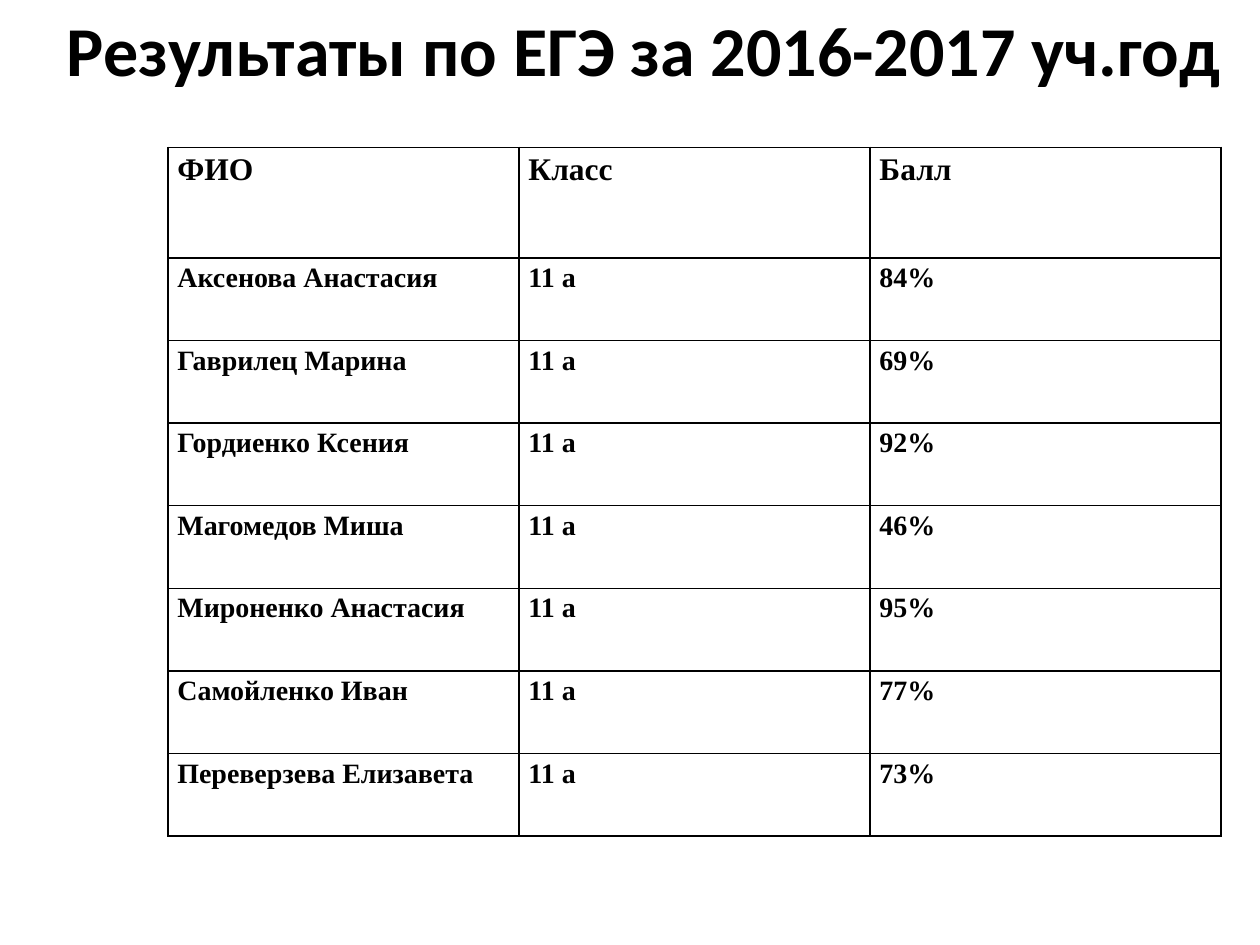
from lxml import etree
from pptx import Presentation
from pptx.dml.color import RGBColor
from pptx.enum import text
from pptx.oxml import ns
from pptx.util import Pt

BLACK = RGBColor(0x00, 0x00, 0x00)

TITLE = "Результаты по ЕГЭ за 2016-2017 уч.год"
HEADINGS = ("ФИО", "Класс", "Балл")
CLASS_NAME = "11 а"
SCORES = {
    "Аксенова Анастасия": "84%",
    "Гаврилец Марина": "69%",
    "Гордиенко Ксения": "92%",
    "Магомедов Миша": "46%",
    "Мироненко Анастасия": "95%",
    "Самойленко Иван": "77%",
    "Переверзева Елизавета": "73%",
}

COLUMN_WIDTH = Pt(200.6)
HEADING_HEIGHT, SCORE_HEIGHT = Pt(63.2), Pt(47.2)


def set_values(target, values):
    for name, value in values.items():
        setattr(target, name, value)


def write_paragraph(paragraph, wording, font, size):
    paragraph.alignment = text.PP_ALIGN.JUSTIFY
    run = paragraph.add_run()
    run.text = wording
    set_values(run.font, {"name": font, "size": Pt(size), "bold": True})
    run.font.color.rgb = BLACK


def add_title(slide):
    heading = slide.shapes.title
    set_values(heading, {"left": Pt(0), "top": Pt(0),
                         "width": Pt(707), "height": Pt(55.6)})
    set_values(heading.text_frame, {
        "word_wrap": True,
        "auto_size": text.MSO_AUTO_SIZE.SHAPE_TO_FIT_TEXT,
        "vertical_anchor": text.MSO_ANCHOR.MIDDLE,
    })
    paragraph = heading.text_frame.paragraphs[0]
    write_paragraph(paragraph, TITLE, "Calibri", 40)
    # First-line indent
    properties = paragraph._p.get_or_add_pPr()
    properties.set("marL", "0")
    properties.set("indent", str(Pt(31)))


def draw_borders(cell):
    properties = cell._tc.get_or_add_tcPr()
    for position, side in enumerate(("lnL", "lnR", "lnT", "lnB")):
        line = etree.Element(ns.qn(f"a:{side}"), w=str(Pt(1)))
        fill = etree.SubElement(line, ns.qn("a:solidFill"))
        etree.SubElement(fill, ns.qn("a:srgbClr"), val=str(BLACK))
        properties.insert(position, line)


def format_cell(cell, wording, size):
    set_values(cell, {"margin_left": Pt(5.4), "margin_right": Pt(5.4),
                      "margin_top": Pt(0), "margin_bottom": Pt(0),
                      "vertical_anchor": text.MSO_ANCHOR.TOP})
    cell.fill.background()
    paragraph = cell.text_frame.paragraphs[0]
    write_paragraph(paragraph, wording, "Times New Roman", size)
    paragraph.line_spacing = 1.15
    draw_borders(cell)


def add_score_table(slide):
    rows = [HEADINGS] + [(name, CLASS_NAME, score)
                         for name, score in SCORES.items()]
    scores = slide.shapes.add_table(
        len(rows), len(HEADINGS), Pt(96), Pt(84.2),
        COLUMN_WIDTH * len(HEADINGS),
        HEADING_HEIGHT + SCORE_HEIGHT * len(SCORES)).table
    set_values(scores, {"first_row": False, "horz_banding": False})
    for column in scores.columns:
        column.width = COLUMN_WIDTH
    for index, (row, wordings) in enumerate(zip(scores.rows, rows)):
        row.height = SCORE_HEIGHT if index else HEADING_HEIGHT
        for cell, wording in zip(row.cells, wordings):
            format_cell(cell, wording, 16 if index else 18)


def main():
    deck = Presentation()
    set_values(deck, {"slide_width": Pt(720), "slide_height": Pt(540)})
    slide = deck.slides.add_slide(deck.slide_layouts[5])  # Title Only
    add_score_table(slide)
    add_title(slide)
    deck.save("out.pptx")


if __name__ == "__main__":
    main()
